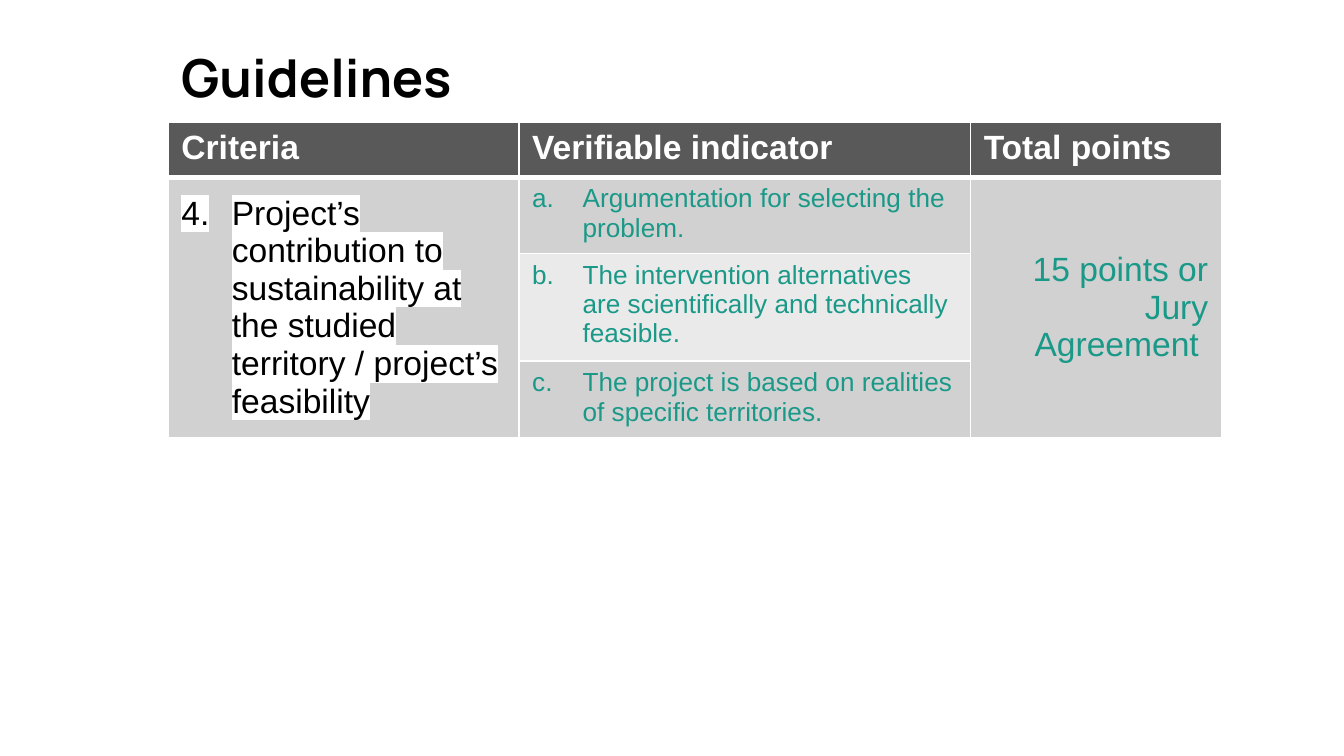
from lxml.etree import SubElement
from pptx import Presentation
from pptx.dml.color import RGBColor
from pptx.enum.text import MSO_ANCHOR, PP_ALIGN
from pptx.oxml.ns import qn
from pptx.util import Inches, Pt

WIDTH = 10
HEIGHT = WIDTH * 9 / 16
LEFT = 0.125 * WIDTH
LIST_INDENT = Pt(27)
WHITE, BLACK, TEAL = "FFFFFF", "000000", "1A9988"
DARK, MIDDLE, LIGHT = "595959", "D1D1D1", "EAEAEA"
COLUMN_WIDTHS = (2.61, 3.36, 1.87)
ROW_HEIGHTS = (0.41, 0.41, 0.41, 0.56)
HEADINGS = ("Criteria", "Verifiable indicator", "Total points")
INDICATORS = (
    "Argumentation for selecting the problem.",
    "The intervention alternatives are scientifically and technically feasible.",
    "The project is based on realities of specific territories.",
)


def color(value):
    return RGBColor.from_string(value)


def add_solid_color(parent, tag, value):
    element = SubElement(parent, qn(tag))
    SubElement(element, qn("a:srgbClr"), val=value)


def write_text(frame, text, size=18, font="Arial", fill=BLACK, bold=False,
               highlight=None, align=PP_ALIGN.LEFT, numbering=None, start=1):
    frame.word_wrap = True
    paragraph = frame.paragraphs[0]
    paragraph.alignment = align
    run = paragraph.add_run()
    run.text = text
    run.font.size = Pt(size)
    run.font.bold = bold
    run.font.color.rgb = color(fill)
    if highlight:
        add_solid_color(run.font._element, "a:highlight", highlight)
    run.font.name = font
    if numbering:
        properties = paragraph._p.get_or_add_pPr()
        properties.set("marL", str(LIST_INDENT))
        properties.set("indent", str(-LIST_INDENT))
        SubElement(properties, qn("a:buFont"), typeface=font)
        SubElement(properties, qn("a:buAutoNum"), type=numbering, startAt=str(start))


def format_cell(cell, fill, bottom_width=1):
    properties = cell._tc.get_or_add_tcPr()
    for side in "LRTB":
        width = Pt(bottom_width if side == "B" else 1)
        line = SubElement(properties, qn(f"a:ln{side}"), w=str(width))
        add_solid_color(line, "a:solidFill", WHITE)
    cell.fill.solid()
    cell.fill.fore_color.rgb = color(fill)


def add_title(slide, left, top, width, height):
    box = slide.shapes.add_textbox(Inches(left), Inches(top), Inches(width), Inches(height))
    frame = box.text_frame
    frame.margin_left = frame.margin_right = Inches(0.1)
    frame.margin_top = frame.margin_bottom = Inches(0.1)
    write_text(frame, "Guidelines", size=28, font="Manrope", bold=True, highlight=WHITE)


def add_criteria_table(slide, left, top, width, height):
    shape = slide.shapes.add_table(len(ROW_HEIGHTS), len(COLUMN_WIDTHS), Inches(left),
                                   Inches(top), Inches(width), Inches(height))
    table = shape.table
    for column, column_width in zip(table.columns, COLUMN_WIDTHS):
        column.width = Inches(column_width)
    for row, row_height in zip(table.rows, ROW_HEIGHTS):
        row.height = Inches(row_height)
    shape.height = Inches(height)
    for row_index, row_fill in enumerate((DARK, MIDDLE, LIGHT, MIDDLE)):
        for column_index in range(len(COLUMN_WIDTHS)):
            merged = row_index > 0 and column_index != 1
            format_cell(table.cell(row_index, column_index),
                        MIDDLE if merged else row_fill, 1 if row_index else 3)
    for column_index, heading in enumerate(HEADINGS):
        write_text(table.cell(0, column_index).text_frame, heading, fill=WHITE, bold=True)
    for row_index, indicator in enumerate(INDICATORS, 1):
        write_text(table.cell(row_index, 1).text_frame, indicator, size=14, fill=TEAL,
                   numbering="alphaLcPeriod", start=row_index)
    for column_index in (0, 2):
        cell = table.cell(1, column_index)
        cell.merge(table.cell(3, column_index))
        cell.vertical_anchor = MSO_ANCHOR.MIDDLE
    write_text(table.cell(1, 0).text_frame,
               "Project’s contribution to sustainability at the studied territory / project’s feasibility",
               highlight=WHITE, numbering="arabicPeriod", start=4)
    write_text(table.cell(1, 2).text_frame, "15 points or Jury Agreement ",
               fill=TEAL, align=PP_ALIGN.RIGHT)


def main():
    presentation = Presentation()
    presentation.slide_width = Inches(WIDTH)
    presentation.slide_height = Inches(HEIGHT)
    slide = presentation.slides.add_slide(presentation.slide_layouts[6])
    add_title(slide, LEFT, 0.24, 6.38, 0.59)
    add_criteria_table(slide, LEFT, 0.91, sum(COLUMN_WIDTHS), 2.34)
    presentation.save("out.pptx")


if __name__ == "__main__":
    main()
